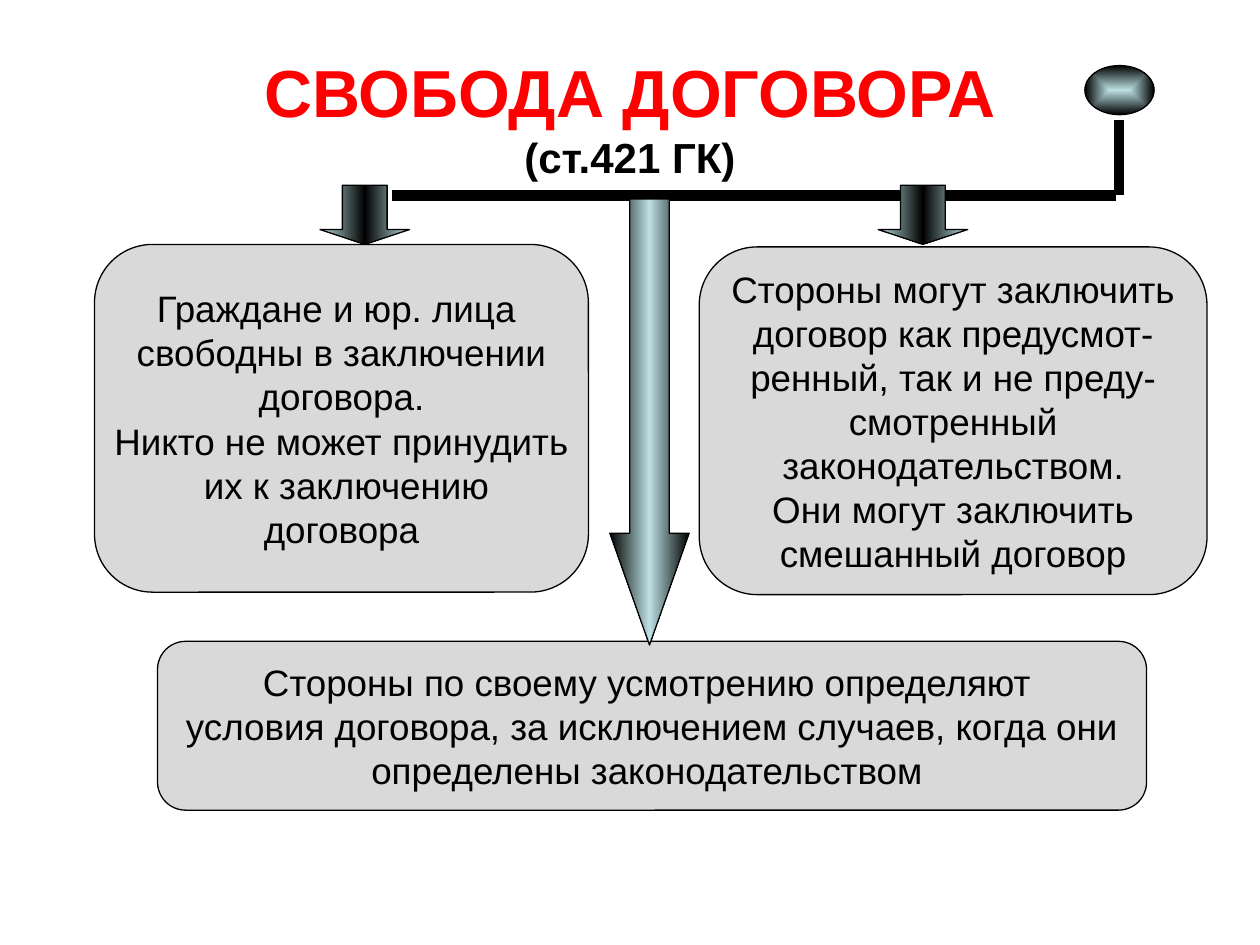
import pptx
import pptx.dml.color
import pptx.enum.shapes
import pptx.enum.text
import pptx.oxml
import pptx.oxml.ns
import pptx.util

Inches = pptx.util.Inches
Pt = pptx.util.Pt
Shapes = pptx.enum.shapes.MSO_SHAPE
BLACK, RED, GREY, TEAL = "000000", "FF0000", "D9D9D9", "BBE0E3"


def color(hex_string):
    return pptx.dml.color.RGBColor.from_string(hex_string)


def write_paragraph(frame, text, size=21, font_color=BLACK, bold=False):
    """Fill the frame's empty first paragraph, or append a new one."""
    paragraph = frame.add_paragraph() if frame.text else frame.paragraphs[0]
    paragraph.alignment = pptx.enum.text.PP_ALIGN.CENTER
    run = paragraph.add_run()
    run.text = text
    run.font.name = "Arial"
    run.font.size = Pt(size)
    run.font.bold = bold
    run.font.color.rgb = color(font_color)


presentation = pptx.Presentation()
presentation.slide_width = Inches(10)
presentation.slide_height = Inches(7.5)
slide = presentation.slides.add_slide(presentation.slide_layouts[6])

# Title
title = slide.shapes.add_textbox(Inches(0.5), Inches(0.3), Inches(9), Inches(1.25))
title.text_frame.word_wrap = True
title.text_frame.vertical_anchor = pptx.enum.text.MSO_ANCHOR.MIDDLE
write_paragraph(title.text_frame, "СВОБОДА ДОГОВОРА", size=38, font_color=RED, bold=True)
write_paragraph(title.text_frame, "(ст.421 ГК)", size=24, bold=True)

# Rounded boxes with the three principles
boxes = [
    ((0.75, 1.94, 3.92, 2.76), [
        "Граждане и юр. лица ",
        "свободны в заключении",
        "договора.",
        "Никто не может принудить",
        " их к заключению",
        "договора",
    ]),
    ((5.55, 1.96, 4.03, 2.76), [
        "Стороны могут заключить",
        "договор как предусмот-",
        "ренный, так и не преду-",
        "смотренный",
        "законодательством.",
        "Они могут заключить",
        "смешанный договор",
    ]),
    ((1.25, 5.09, 7.85, 1.34), [
        "Стороны по своему усмотрению определяют ",
        "условия договора, за исключением случаев, когда они",
        "определены законодательством ",
    ]),
]
for position, lines in boxes:
    box = slide.shapes.add_shape(Shapes.ROUNDED_RECTANGLE, *map(Inches, position))
    box.shadow.inherit = False
    box.fill.solid()
    box.fill.fore_color.rgb = color(GREY)
    box.line.color.rgb = color(BLACK)
    box.line.width = Pt(0.75)
    box.text_frame.word_wrap = False
    box.text_frame.vertical_anchor = pptx.enum.text.MSO_ANCHOR.MIDDLE
    for line in lines:
        write_paragraph(box.text_frame, line)

# Thick line from the oval to the arrows
for ends in [(8.88, 0.95, 8.88, 1.55), (8.86, 1.55, 3.11, 1.55)]:
    connector = slide.shapes.add_connector(
        pptx.enum.shapes.MSO_CONNECTOR.STRAIGHT, *map(Inches, ends))
    connector.line.color.rgb = color(BLACK)
    connector.line.width = Pt(6)
    connector._element.spPr.append(pptx.oxml.parse_xml(
        f"<a:effectLst {pptx.oxml.ns.nsdecls('a')}/>"))

# Oval and arrows with gradient fills
linear = '<a:lin ang="0" scaled="1"/>'
from_center = ('<a:path path="shape">'
               '<a:fillToRect l="50000" t="50000" r="50000" b="50000"/></a:path>')
gradient_shapes = [
    (Shapes.OVAL, (8.61, 0.52, 0.55, 0.39), [], [TEAL, BLACK], from_center),
    (Shapes.DOWN_ARROW, (2.54, 1.47, 0.71, 0.47), [0.5, 0.25], [TEAL, BLACK, TEAL], linear),
    (Shapes.DOWN_ARROW, (6.97, 1.47, 0.71, 0.47), [0.5, 0.25], [TEAL, BLACK, TEAL], linear),
    (Shapes.DOWN_ARROW, (4.84, 1.58, 0.63, 3.54), [0.5, 1.41], [BLACK, TEAL, BLACK], linear),
]
for kind, position, adjustments, stops, direction in gradient_shapes:
    shape = slide.shapes.add_shape(kind, *map(Inches, position))
    for index, adjustment in enumerate(adjustments):
        shape.adjustments[index] = adjustment
    shape.shadow.inherit = False
    shape.line.color.rgb = color(BLACK)
    shape.line.width = Pt(0.75)
    stop_xml = "".join(
        f'<a:gs pos="{100000 * index // (len(stops) - 1)}"><a:srgbClr val="{stop}"/></a:gs>'
        for index, stop in enumerate(stops))
    geometry = shape._element.spPr.find(pptx.oxml.ns.qn("a:prstGeom"))
    geometry.addnext(pptx.oxml.parse_xml(
        f'<a:gradFill {pptx.oxml.ns.nsdecls("a")} rotWithShape="1">'
        f"<a:gsLst>{stop_xml}</a:gsLst>{direction}</a:gradFill>"))

presentation.save("out.pptx")
